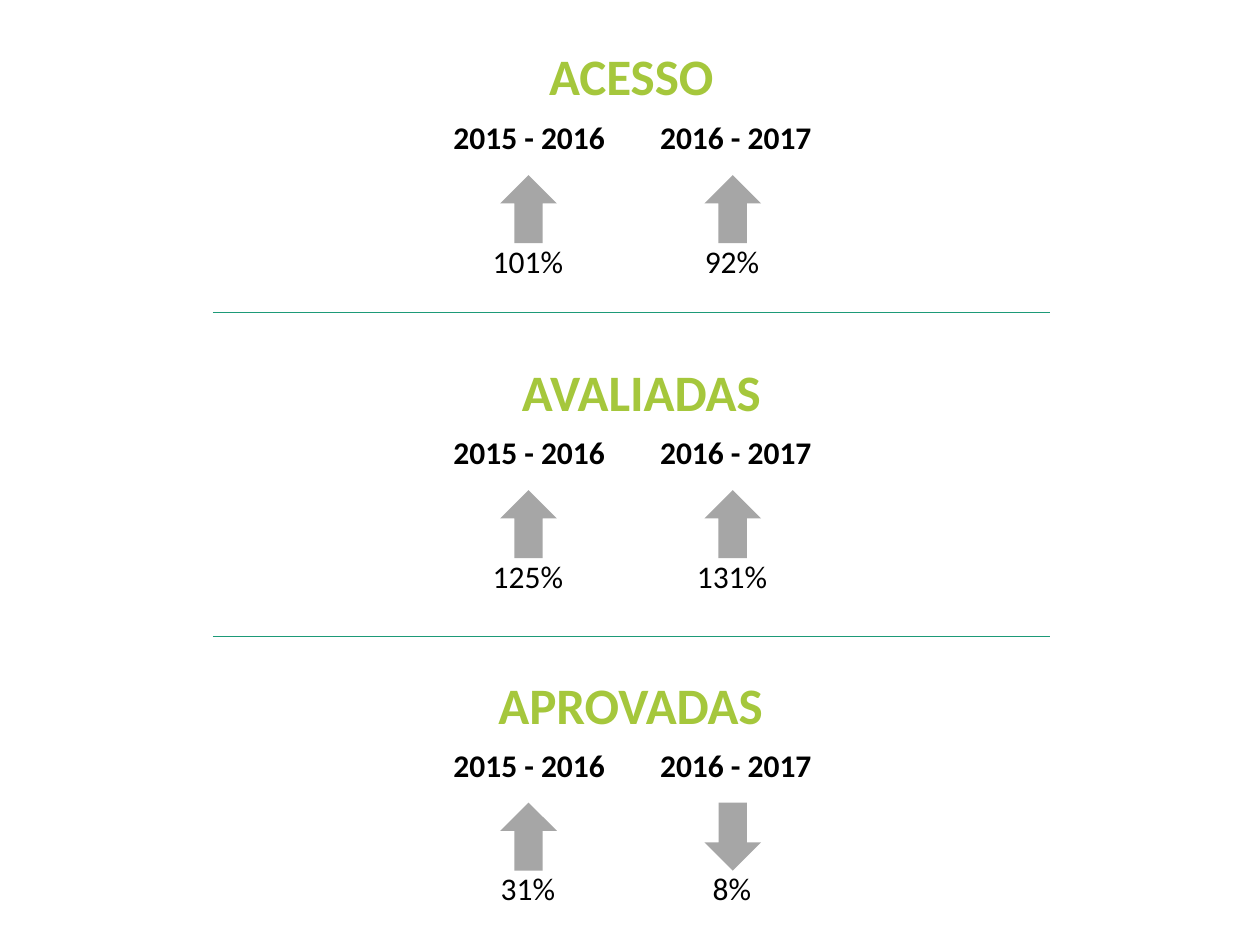
import pptx
import pptx.util
import pptx.dml.color
import pptx.enum.shapes
import pptx.enum.text
import pptx.oxml.ns
import lxml.etree

PX = 9144  # EMU per px, 100 px to the inch
COLORS = {"heading": "A5C73C", "text": "000000", "arrow": "A6A6A6", "rule": "1D9A78"}
ALIGN = pptx.enum.text.PP_ALIGN
AUTO = pptx.enum.text.MSO_AUTO_SIZE
FORMATS = {
    "heading": {"size": 29.2, "bold": True, "align": ALIGN.CENTER,
                "spacing": 0.9, "auto": AUTO.NONE},
    "period": {"size": 18, "bold": True, "align": ALIGN.RIGHT,
               "spacing": 1.0, "auto": AUTO.SHAPE_TO_FIT_TEXT},
    "value": {"size": 18, "bold": False, "align": ALIGN.CENTER,
              "spacing": 1.0, "auto": AUTO.SHAPE_TO_FIT_TEXT},
}

# Heading, its left, top, width and height, top of the periods, two changes in percent
SECTIONS = [
    ("ACESSO", (415, 36, 172, 67), 89, (101, 92)),
    ("AVALIADAS", (397, 287, 224, 111), 339, (125, 131)),
    ("APROVADAS", (380, 535, 241, 111), 587, (31, -8)),
]
# Period, its left and width, left of the arrow, left of the value
COLUMNS = [
    ("2015 - 2016", 348, 142, 397, 374),
    ("2016 - 2017", 509, 145, 559, 536),
]
RULES = [248, 505]


def rgb(name):
    return pptx.dml.color.RGBColor.from_string(COLORS[name])


class Deck:
    def __init__(self, width, height):
        self.font = "Calibri"
        self.prs = pptx.Presentation()
        self.prs.slide_width, self.prs.slide_height = self.emu(width, height)
        self.s = self.prs.slides.add_slide(self.prs.slide_layouts[6])

    def emu(self, *lengths):
        return [pptx.util.Emu(n * PX) for n in lengths]

    def group(self):
        return self.s.shapes.add_group_shape().shapes

    def text(self, shapes, words, box, kind, color="text"):
        fmt = FORMATS[kind]
        tf = shapes.add_textbox(*self.emu(*box)).text_frame
        p = tf.paragraphs[0]
        r = p.add_run()
        r.text = words
        r.font.color.rgb = rgb(color)
        settings = [
            (tf, {"word_wrap": True, "auto_size": fmt["auto"]}),
            (p, {"alignment": fmt["align"], "line_spacing": fmt["spacing"]}),
            (r.font, {"name": self.font, "size": pptx.util.Pt(fmt["size"]),
                      "bold": fmt["bold"]}),
        ]
        for target, values in settings:
            for name, value in values.items():
                setattr(target, name, value)

    def arrow(self, shapes, box, up):
        kind = pptx.enum.shapes.MSO_SHAPE.UP_ARROW
        sp = shapes.add_shape(kind, *self.emu(*box))
        sp.shadow.inherit = False
        sp.fill.solid()
        sp.fill.fore_color.rgb = rgb("arrow")
        sp.line.fill.background()
        sp.rotation = 0 if up else 180

    def rule(self, x1, x2, y):
        kind = pptx.enum.shapes.MSO_CONNECTOR.STRAIGHT
        line = self.s.shapes.add_connector(kind, *self.emu(x1, y, x2, y))
        line.line.color.rgb = rgb("rule")
        line.line.width = pptx.util.Pt(0.5)
        lxml.etree.SubElement(line._element.spPr, pptx.oxml.ns.qn("a:effectLst"))


def main():
    deck = Deck(1000, 750)

    # Sections: heading, then period, arrow and value in each column
    for heading, box, top, changes in SECTIONS:
        shapes = deck.group()
        deck.text(shapes, heading, box, "heading", "heading")
        for (period, left, width, arrow_x, value_x), change in zip(COLUMNS, changes):
            deck.text(shapes, period, (left, top, width, 40), "period")
            deck.arrow(shapes, (arrow_x, top + 50, 45, 54), change > 0)
            deck.text(shapes, f"{abs(change)}%", (value_x, top + 98, 90, 40), "value")

    # Rules between the sections
    for y in RULES:
        deck.rule(169, 833, y)

    deck.prs.save("out.pptx")


if __name__ == "__main__":
    main()
